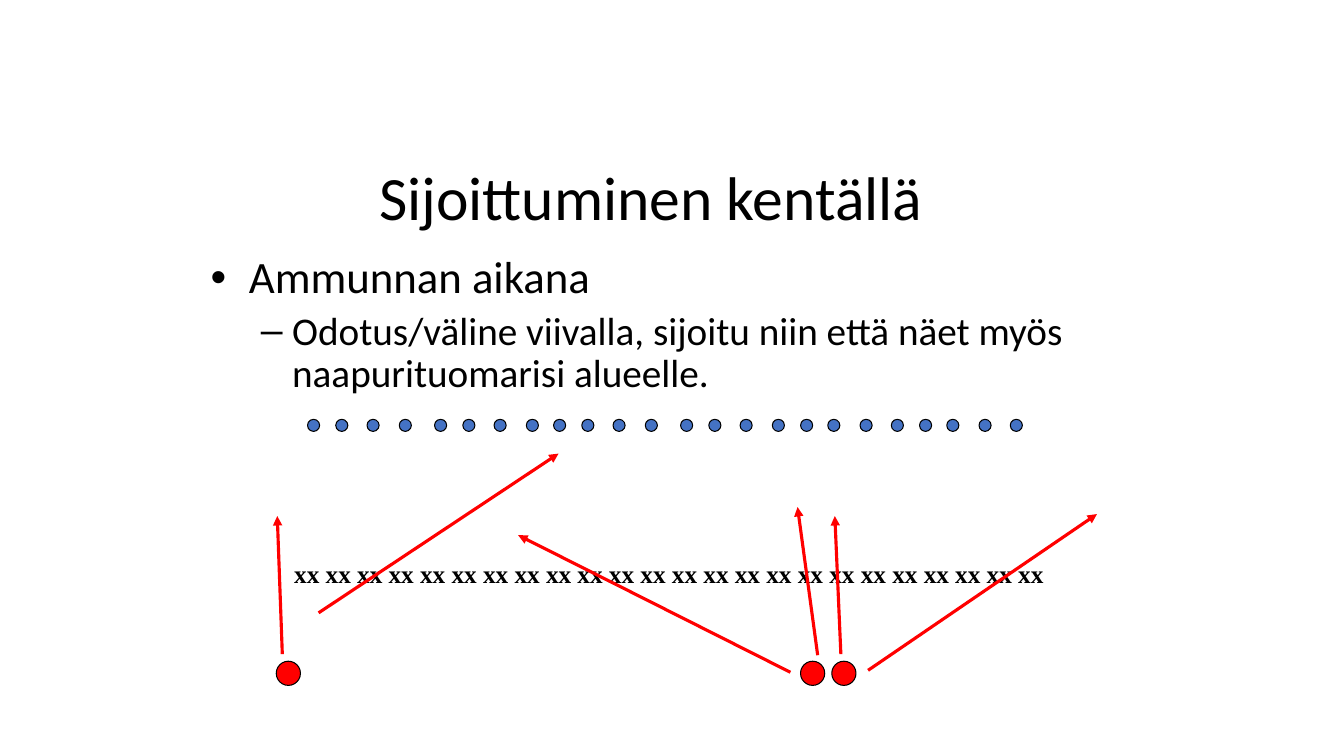
from lxml.etree import SubElement
from pptx import Presentation
from pptx.dml.color import RGBColor
from pptx.enum.shapes import MSO_CONNECTOR, MSO_SHAPE
from pptx.enum.text import MSO_ANCHOR, PP_ALIGN
from pptx.oxml.ns import qn
from pptx.util import Pt

PX = 9144
COLORS = {"text": "000000", "target": "4472C4", "judge": "FF0000"}

TITLE = "Sijoittuminen kentällä"
BULLETS = [
    ("Ammunnan aikana", "•", 32, 38, 38, 0),
    ("Odotus/väline viivalla, sijoitu niin että näet myös naapurituomarisi alueelle.",
     "–", 28, 81, 31, 5.6),
]
ARCHERS = " ".join(["xx"] * 24)
TARGET_TOP, TARGET_SIZE = 416, 12
TARGET_LEFTS = [305, 333, 364, 396, 431, 459, 490, 522, 549, 577, 608, 640,
                675, 703, 734, 766, 794, 821, 853, 884, 912, 939, 971, 1002]
JUDGE_TOP, JUDGE_SIZE = 656, 24
JUDGE_LEFTS = [274, 794, 825]
SIGHT_LINES = [
    (861, 665, 1088, 510),
    (834, 649, 828, 512),
    (280, 649, 275, 512),
    (811, 650, 791, 503),
    (784, 667, 514, 531),
    (316, 608, 554, 450),
]


def color(name):
    return RGBColor.from_string(COLORS[name])


def px(*lengths):
    return [length * PX for length in lengths]


def add_text_box(page, left, top, width, height, wrap=True):
    box = page.shapes.add_textbox(*px(left, top, width, height))
    box.text_frame.word_wrap = wrap
    return box.text_frame


def style(para, font_name, size, bold=False):
    for span in para.runs:
        span.font.name = font_name
        span.font.size = Pt(size)
        span.font.bold = bold
        span.font.color.rgb = color("text")


def add_bullet(para, mark, margin, hanging):
    properties = para._p.get_or_add_pPr()
    properties.set("marL", str(margin * PX))
    properties.set("indent", str(-hanging * PX))
    SubElement(properties, qn("a:buFont")).set("typeface", "Arial")
    SubElement(properties, qn("a:buChar")).set("char", mark)


def add_circle(page, left, top, size, fill):
    circle = page.shapes.add_shape(MSO_SHAPE.OVAL, *px(left, top, size, size))
    circle.shadow.inherit = False
    circle.fill.solid()
    circle.fill.fore_color.rgb = color(fill)
    circle.line.color.rgb = color("text")
    circle.line.width = Pt(0.75)


def add_arrow(page, ends):
    arrow = page.shapes.add_connector(MSO_CONNECTOR.STRAIGHT, *px(*ends))
    arrow.line.color.rgb = color("judge")
    arrow.line.width = Pt(2.25)
    SubElement(arrow.line._get_or_add_ln(), qn("a:tailEnd")).set("type", "triangle")
    SubElement(arrow._element.spPr, qn("a:effectLst"))


def main():
    deck = Presentation()
    deck.slide_width, deck.slide_height = px(1333, 750)
    page = deck.slides.add_slide(deck.slide_layouts[6])

    title = add_text_box(page, 196, 136, 900, 125)
    title.vertical_anchor = MSO_ANCHOR.MIDDLE
    title.text = TITLE
    heading = title.paragraphs[0]
    heading.alignment = PP_ALIGN.CENTER
    heading.line_spacing = 0.9
    style(heading, "Calibri", 44)

    body = add_text_box(page, 199, 248, 900, 495)
    body.text = "\n".join(bullet[0] for bullet in BULLETS)
    for level, (para, bullet) in enumerate(zip(body.paragraphs, BULLETS)):
        _, mark, size, margin, hanging, before = bullet
        para.level = level
        add_bullet(para, mark, margin, hanging)
        para.line_spacing = 0.9
        para.space_before = Pt(before)
        style(para, "Calibri", size)

    for left in TARGET_LEFTS:
        add_circle(page, left, TARGET_TOP, TARGET_SIZE, "target")

    archers = add_text_box(page, 282, 549, 764, 40, wrap=False)
    archers.text = ARCHERS
    style(archers.paragraphs[0], "Times New Roman", 18, bold=True)

    for left in JUDGE_LEFTS:
        add_circle(page, left, JUDGE_TOP, JUDGE_SIZE, "judge")
    for ends in SIGHT_LINES:
        add_arrow(page, ends)

    deck.save("out.pptx")


if __name__ == "__main__":
    main()
